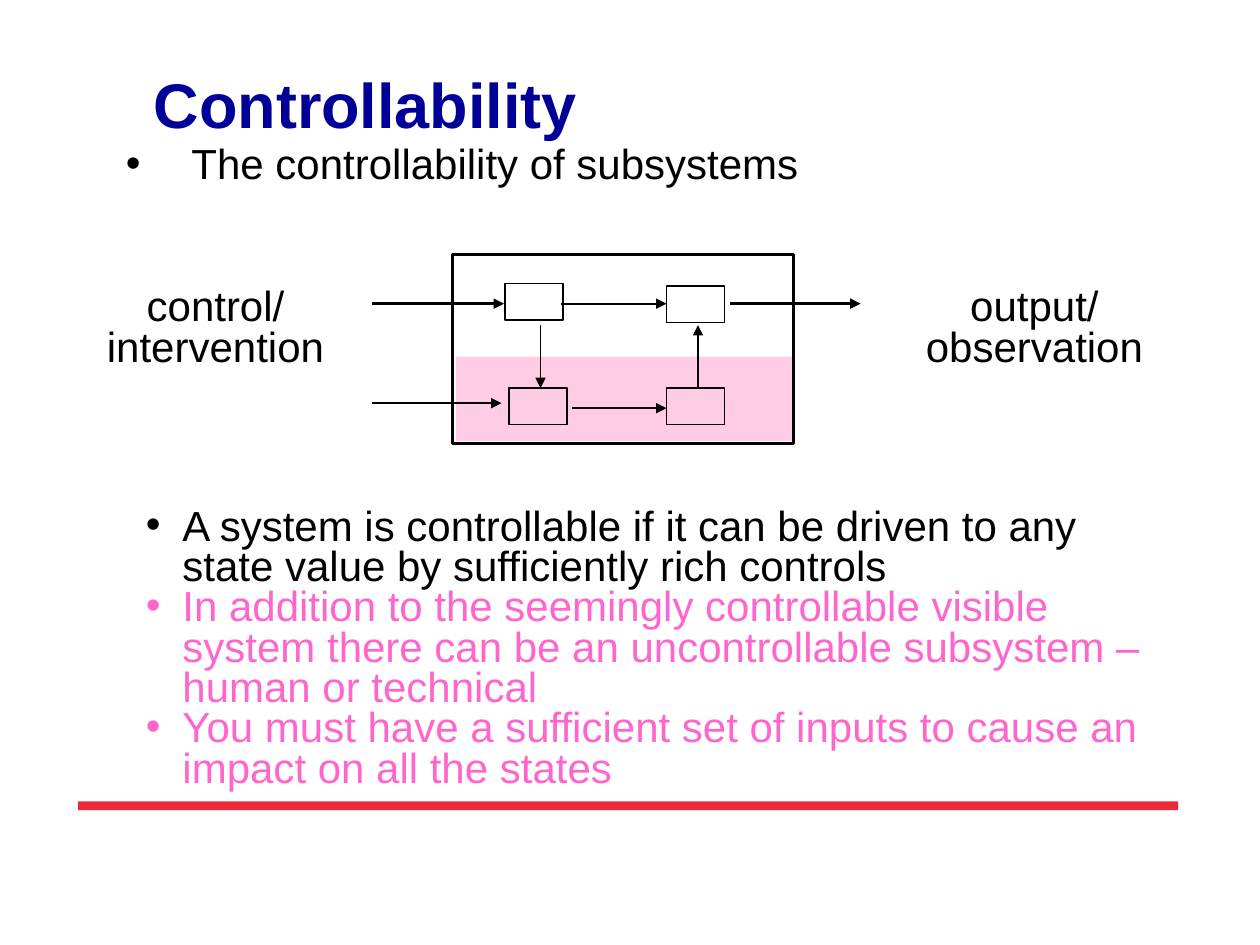
from lxml import etree
from pptx import Presentation
from pptx.dml.color import RGBColor
from pptx.enum import shapes, text
from pptx.oxml import ns
from pptx.util import Inches, Pt

BLACK, PINK = "000000", "FF66CC"


def rgb(hex_code):
    return RGBColor.from_string(hex_code)


def add_child(parent, tag, **attrs):
    return etree.SubElement(parent, ns.qn(tag), attrs)


def set_paragraph(p, words, color=BLACK, align=text.PP_ALIGN.LEFT, indent=None):
    """Write one 24 pt paragraph, bulleted when a hanging indent is given."""
    p.text = words
    p.alignment = align
    p.line_spacing = 0.8
    if indent:
        pPr = p._p.get_or_add_pPr()
        pPr.set("marL", str(Inches(indent)))
        pPr.set("indent", str(-Inches(indent)))
        add_child(pPr, "a:buFont", typeface="Arial")
        add_child(pPr, "a:buChar", char="•")
    p.font.size = Pt(24)
    p.font.name = "Arial"
    p.font.color.rgb = rgb(color)


def add_text(slide, box, paragraphs, margins=(0.1, 0.05), **style):
    """Place a text box; paragraphs are (words, colour) pairs."""
    tf = slide.shapes.add_textbox(*map(Inches, box)).text_frame
    tf.word_wrap = True
    tf.margin_left = tf.margin_right = Inches(margins[0])
    tf.margin_top = tf.margin_bottom = Inches(margins[1])
    for i, (words, color) in enumerate(paragraphs):
        p = tf.add_paragraph() if i else tf.paragraphs[0]
        set_paragraph(p, words, color, **style)


def add_rect(parent, box, fill=None, alpha=None, line=None):
    sp = parent.shapes.add_shape(shapes.MSO_SHAPE.RECTANGLE, *map(Inches, box))
    sp.shadow.inherit = False
    if fill:
        sp.fill.solid()
        sp.fill.fore_color.rgb = rgb(fill)
        if alpha:
            color = sp.fill._xPr.find(".//" + ns.qn("a:srgbClr"))
            add_child(color, "a:alpha", val=str(alpha * 1000))
    else:
        sp.fill.background()
    if line:
        sp.line.color.rgb = rgb(BLACK)
        sp.line.width = Pt(line)
    else:
        sp.line.fill.background()


def add_arrow(parent, start, end, width=1):
    line = parent.shapes.add_connector(
        shapes.MSO_CONNECTOR.STRAIGHT, *map(Inches, (*start, *end)))
    line.line.color.rgb = rgb(BLACK)
    line.line.width = Pt(width)
    add_child(line.line._get_or_add_ln(), "a:tailEnd", type="triangle")
    add_child(line._element.spPr, "a:effectLst")


def add_title(slide, box, words):
    title = slide.shapes.title
    title.left, title.top, title.width, title.height = map(Inches, box)
    tf = title.text_frame
    tf.margin_left = tf.margin_right = tf.margin_top = tf.margin_bottom = 0
    tf.vertical_anchor = text.MSO_ANCHOR.TOP
    p = tf.paragraphs[0]
    p.text = words
    p.alignment = text.PP_ALIGN.LEFT
    p.font.size = Pt(36)
    p.font.bold = True
    p.font.name = "Arial"
    p.font.color.rgb = rgb("000099")


def add_system_diagram(slide, box):
    """System frame with four subsystems; the lower pair is shaded."""
    x, y, w, h = box
    group = slide.shapes.add_group_shape()

    class Parent:
        shapes = group.shapes

    # Shaded uncontrollable part and system frame
    add_rect(Parent, (x + 0.03, y + 0.81, w - 0.04, 0.67), "FF99CC", alpha=50)
    add_rect(Parent, box, line=1.5)

    # Subsystems
    for dx, dy in ((0.42, 0.23), (1.7, 0.25), (0.45, 1.06), (1.7, 1.06)):
        add_rect(Parent, (x + dx, y + dy, 0.46, 0.29), line=1)

    # Links between subsystems, then inputs and output
    for x1, y1, x2, y2, width in (
        (0.86, 0.39, 1.7, 0.39, 1),
        (0.95, 1.22, 1.7, 1.22, 1),
        (0.7, 0.56, 0.7, 1.06, 1),
        (1.95, 1.06, 1.95, 0.56, 1),
        (-0.64, 0.39, 0.41, 0.39, 1.5),
        (-0.64, 1.18, 0.39, 1.18, 1.25),
        (2.2, 0.39, 3.24, 0.39, 1.5),
    ):
        add_arrow(Parent, (x + x1, y + y1), (x + x2, y + y2), width)


def main():
    prs = Presentation()
    prs.slide_width, prs.slide_height = Inches(10), Inches(7.5)
    slide = prs.slides.add_slide(prs.slide_layouts[5])

    # Footer rule
    add_rect(slide, (0.62, 6.36, 8.73, 0.07), "ED2939")

    # Heading and lead line
    add_title(slide, (1.22, 0.52, 7.85, 1.18), "Controllability")
    add_text(slide, (1, 1.17, 8.26, 0.58),
             [("The controllability of subsystems", BLACK)],
             margins=(0, 0), indent=0.52)

    # Diagram with a label on each side
    add_system_diagram(slide, (3.59, 2.02, 2.71, 1.5))
    for left, words in ((0.5, ("control/", "intervention")),
                        (7, ("output/", "observation"))):
        add_text(slide, (left, 2.25, 2.42, 0.58),
                 [(word, BLACK) for word in words],
                 align=text.PP_ALIGN.CENTER)

    # Conclusions
    add_text(slide, (1.06, 3.99, 8.33, 2.68), [
        ("A system is controllable if it can be driven to any state value "
         "by sufficiently rich controls", BLACK),
        ("In addition to the seemingly controllable visible system there can "
         "be an uncontrollable subsystem – human or technical", PINK),
        ("You must have a sufficient set of inputs to cause an impact on all "
         "the states", PINK),
    ], indent=0.29)

    prs.save("out.pptx")


if __name__ == "__main__":
    main()
